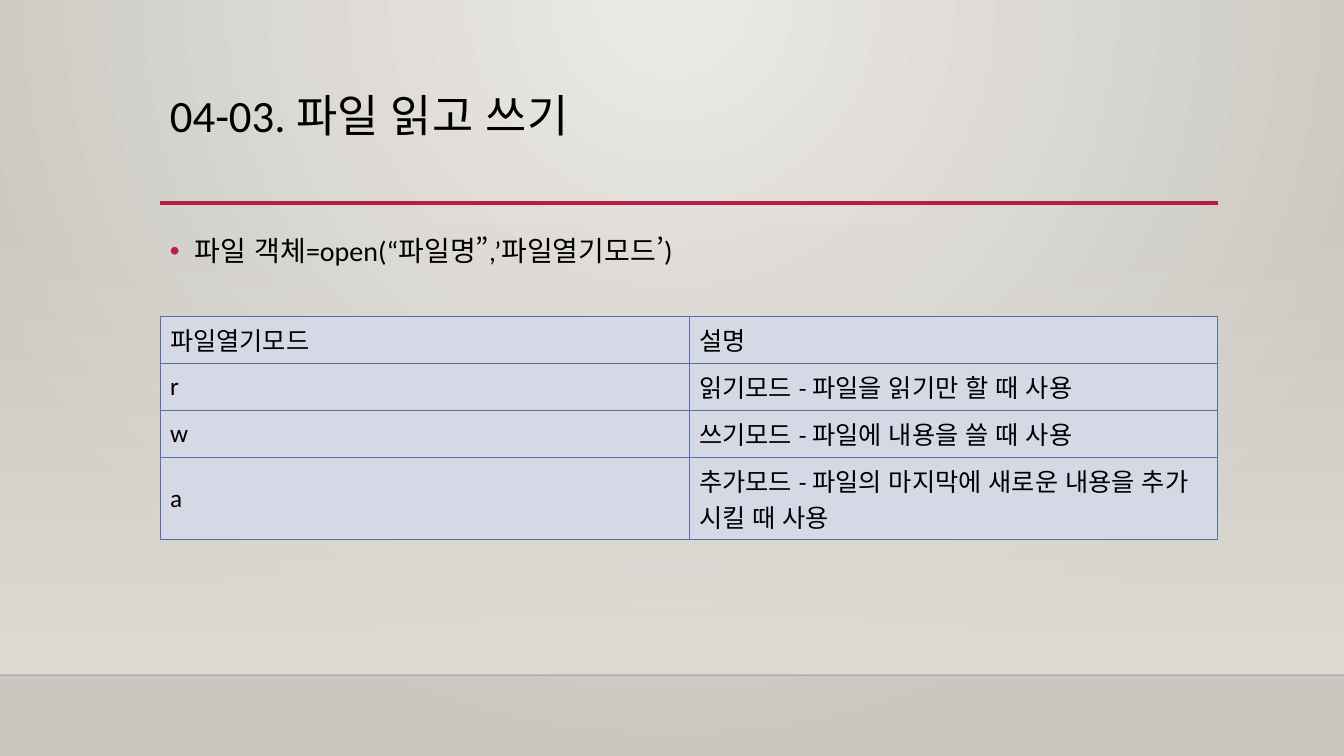
from lxml import etree
from pptx import Presentation
from pptx.dml.color import RGBColor
from pptx.enum.lang import MSO_LANGUAGE_ID
from pptx.enum.shapes import MSO_CONNECTOR, MSO_SHAPE
from pptx.enum.text import MSO_ANCHOR
from pptx.oxml import parse_xml
from pptx.oxml.ns import nsdecls, qn
from pptx.util import Pt

KOREAN = MSO_LANGUAGE_ID.KOREAN
STRAIGHT = MSO_CONNECTOR.STRAIGHT
RECTANGLE = MSO_SHAPE.RECTANGLE
TOP, MIDDLE = MSO_ANCHOR.TOP, MSO_ANCHOR.MIDDLE

EMU_PER_PX = 12192000 / 1344
WIDTH, HEIGHT = 1344, 756
LEFT, CONTENT_WIDTH = 160, 1058
FLOOR_Y = 675

COLORS = {
    "text": "000000",
    "accent": "B71E42",
    "wall_light": "ECEAE7",
    "wall_dark": "CAC7C1",
    "glow": "DFDBD5",
    "floor_edge": "000001",
    "cell": "D5D9E5",
    "border": "586EA6",
}


def px(length):
    return round(length * EMU_PER_PX)


def write_text(frame, text, size=18, color="text", font="Calibri",
               line_spacing=None, bullet=None, anchor=TOP):
    frame.word_wrap = True
    frame.vertical_anchor = anchor
    paragraph = frame.paragraphs[0]
    if bullet:
        props = paragraph._p.get_or_add_pPr()
        props.set("marL", str(px(25)))
        props.set("indent", str(-px(25)))
        props.append(parse_xml(
            f'<a:buClr {nsdecls("a")}><a:srgbClr val="{COLORS[bullet]}"/></a:buClr>'))
        props.append(parse_xml(f'<a:buFont {nsdecls("a")} typeface="Arial"/>'))
        props.append(parse_xml(f'<a:buChar {nsdecls("a")} char="•"/>'))
    if line_spacing:
        paragraph.line_spacing = line_spacing
    run = paragraph.add_run()
    run.text = text
    run.font.size = Pt(size)
    run.font.name = font
    run.font.language_id = KOREAN
    run.font.color.rgb = RGBColor.from_string(COLORS[color])


class SlideBuilder:
    def __init__(self, slide):
        self.slide = slide

    def gradient(self, fill, owner, stops, direction):
        """Stops are (position %, colour name, opacity %)."""
        fill.gradient()
        old = owner.find(".//" + qn("a:gradFill"))
        stop_xml = "".join(
            f'<a:gs pos="{pos * 1000}"><a:srgbClr val="{COLORS[color]}">'
            f'<a:alpha val="{opacity * 1000}"/></a:srgbClr></a:gs>'
            for pos, color, opacity in stops)
        new = parse_xml(f'<a:gradFill {nsdecls("a")} rotWithShape="1">'
                        f'<a:gsLst>{stop_xml}</a:gsLst>{direction}</a:gradFill>')
        old.getparent().replace(old, new)

    def background(self, stops, direction):
        self.gradient(self.slide.background.fill, self.slide.element, stops, direction)

    def panel(self, x, y, w, h, stops, direction):
        shape = self.slide.shapes.add_shape(RECTANGLE, px(x), px(y), px(w), px(h))
        shape.shadow.inherit = False
        shape.line.fill.background()
        self.gradient(shape.fill, shape.element.spPr, stops, direction)

    def rule(self, x, y, w, color, weight, opacity=100):
        line = self.slide.shapes.add_connector(STRAIGHT, px(x), px(y), px(x + w), px(y))
        line.line.width = Pt(weight)
        line.line.color.rgb = RGBColor.from_string(COLORS[color])
        props = line.element.spPr
        if opacity < 100:
            tint = props.find(".//" + qn("a:srgbClr"))
            etree.SubElement(tint, qn("a:alpha")).set("val", str(opacity * 1000))
        etree.SubElement(props, qn("a:effectLst"))

    def text(self, x, y, w, h, content, **style):
        box = self.slide.shapes.add_textbox(px(x), px(y), px(w), px(h))
        write_text(box.text_frame, content, **style)

    def table(self, x, y, w, row_heights, rows):
        columns = len(rows[0])
        table = self.slide.shapes.add_table(
            len(rows), columns, px(x), px(y), px(w), px(sum(row_heights))).table
        for column in table.columns:
            column.width = px(w // columns)
        for row, height, contents in zip(table.rows, row_heights, rows):
            row.height = px(height)
            for cell, content in zip(row.cells, contents):
                write_text(cell.text_frame, content)
                cell.vertical_anchor = MIDDLE
                self.borders(cell, "border", 0.75)
                cell.fill.solid()
                cell.fill.fore_color.rgb = RGBColor.from_string(COLORS["cell"])

    def borders(self, cell, color, weight):
        props = cell._tc.get_or_add_tcPr()
        for side in ("lnL", "lnR", "lnT", "lnB"):
            props.append(parse_xml(
                f'<a:{side} {nsdecls("a")} w="{Pt(weight)}"><a:solidFill>'
                f'<a:srgbClr val="{COLORS[color]}"/></a:solidFill></a:{side}>'))


def main():
    deck = Presentation()
    deck.slide_width, deck.slide_height = px(WIDTH), px(HEIGHT)
    page = SlideBuilder(deck.slides.add_slide(deck.slide_layouts[6]))

    # Wall and floor
    page.background(
        [(0, "wall_light", 100), (100, "wall_dark", 100)],
        '<a:path path="circle">'
        '<a:fillToRect l="43000" t="0" r="43000" b="100000"/></a:path>')
    page.panel(0, 223, WIDTH, FLOOR_Y - 223,
               [(0, "glow", 0), (100, "glow", 100)],
               '<a:lin ang="5400000" scaled="0"/>')
    page.rule(0, FLOOR_Y, WIDTH, "floor_edge", 1, opacity=20)

    # Title
    page.rule(LEFT, 203, CONTENT_WIDTH, "accent", 2.5)
    page.text(LEFT, 89, CONTENT_WIDTH, 116, "04-03. 파일 읽고 쓰기",
              size=32, line_spacing=0.9)

    # Syntax of open
    page.text(LEFT, 222, CONTENT_WIDTH, 380, "파일 객체=open(“파일명”,’파일열기모드’)",
              size=20, line_spacing=1.2, bullet="accent")

    # File modes
    page.table(LEFT, 316, CONTENT_WIDTH, [47, 47, 47, 83], [
        ("파일열기모드", "설명"),
        ("r", "읽기모드 - 파일을 읽기만 할 때 사용"),
        ("w", "쓰기모드 - 파일에 내용을 쓸 때 사용"),
        ("a", "추가모드 - 파일의 마지막에 새로운 내용을 추가 시킬 때 사용"),
    ])

    deck.save("out.pptx")


if __name__ == "__main__":
    main()
